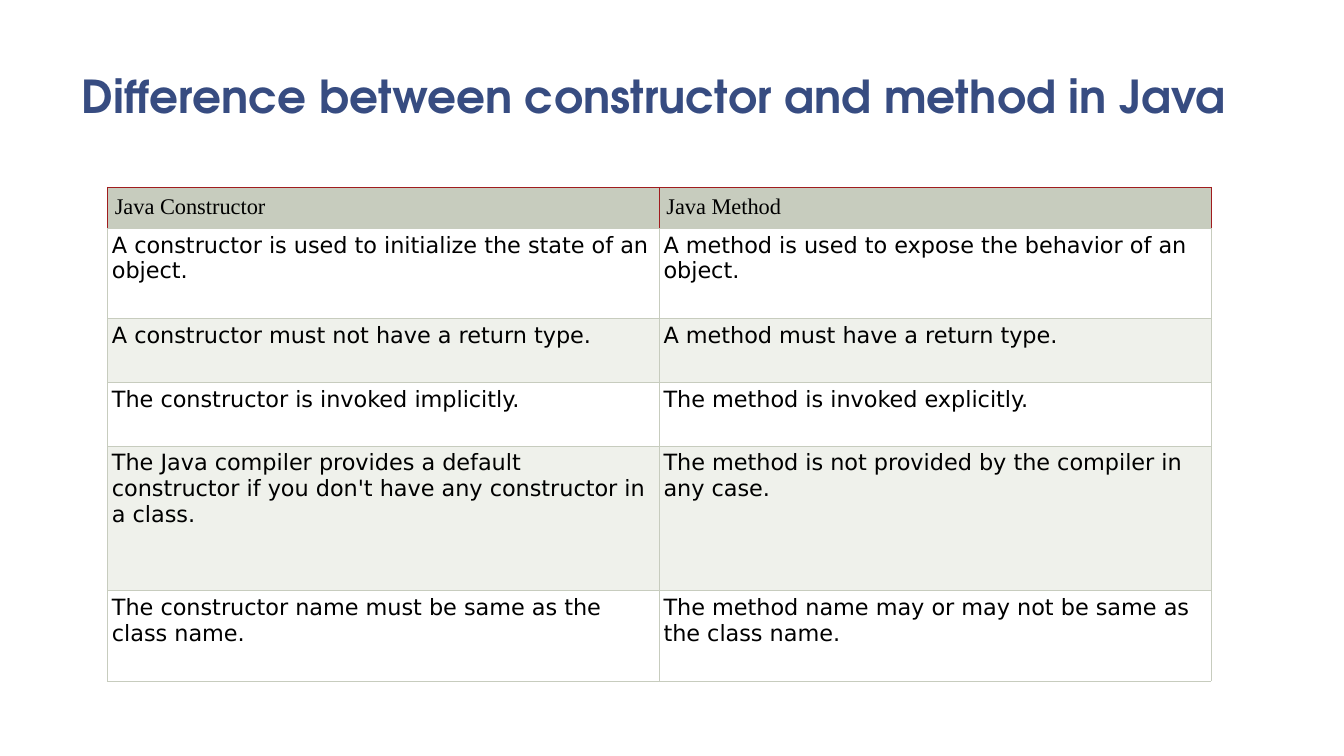
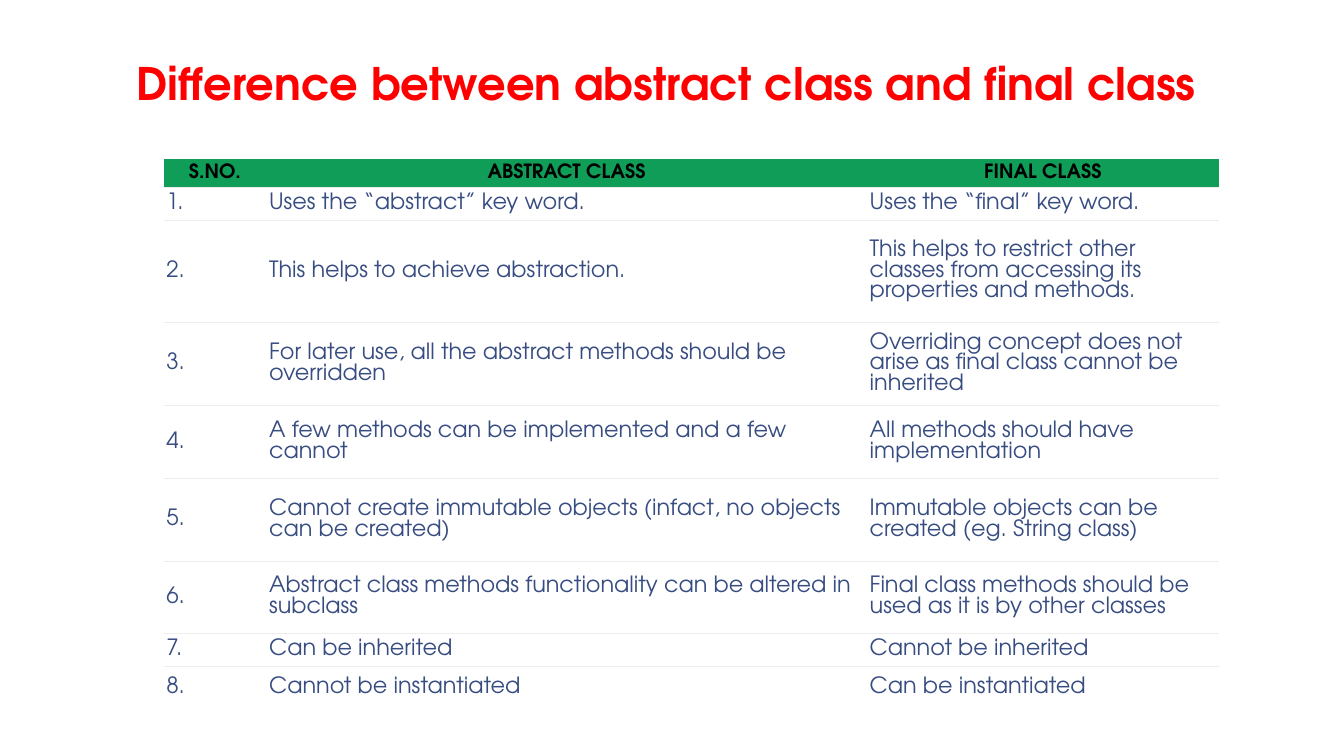
import pptx
import pptx.dml.color
import pptx.enum.text
import pptx.oxml.ns
import pptx.util
from dataclasses import dataclass
from lxml import etree

Pt = pptx.util.Pt
ALIGN = pptx.enum.text.PP_ALIGN
ANCHOR = pptx.enum.text.MSO_ANCHOR


@dataclass(frozen=True)
class Theme:
    navy: str = "374C81"
    red: str = "FF0000"
    black: str = "000000"
    white: str = "FFFFFF"
    sage: str = "C7CCBE"
    pale_sage: str = "EFF1EB"
    maroon: str = "A01C1E"
    green: str = "0F9D58"
    rule: str = "EDEDED"
    display: str = "TeX Gyre Adventor"
    sans: str = "DejaVu Sans"
    serif: str = "Times New Roman"
    body_size: float = 16
    heading_size: float = 14
    rule_width: float = 0.6


THEME = Theme()

# Content: the first row of each comparison is its heading
CONSTRUCTOR_VS_METHOD = [
    ("Java Constructor", "Java Method"),
    ("A constructor is used to initialize the state of an object.",
     "A method is used to expose the behavior of an object."),
    ("A constructor must not have a return type.", "A method must have a return type."),
    ("The constructor is invoked implicitly.", "The method is invoked explicitly."),
    ("The Java compiler provides a default constructor if you don't have any constructor in a class.",
     "The method is not provided by the compiler in any case."),
    ("The constructor name must be same as the class name.",
     "The method name may or may not be same as the class name."),
]

ABSTRACT_VS_FINAL = [
    ("Uses the “abstract” key word.", "Uses the “final” key word."),
    ("This helps to achieve abstraction.",
     "This helps to restrict other classes from accessing its properties and methods."),
    ("For later use, all the abstract methods should be overridden",
     "Overriding concept does not arise as final class cannot be inherited"),
    ("A few methods can be implemented and a few cannot",
     "All methods should have implementation"),
    ("Cannot create immutable objects (infact, no objects can be created)",
     "Immutable objects can be created (eg. String class)"),
    ("Abstract class methods functionality can be altered in subclass",
     "Final class methods should be used as it is by other classes"),
    ("Can be inherited", "Cannot be inherited"),
    ("Cannot be instantiated", "Can be instantiated"),
]
NUMBERED_DIFFERENCES = [("S.NO.", "ABSTRACT CLASS", "FINAL CLASS")] + [
    (f"{number}.", *pair) for number, pair in enumerate(ABSTRACT_VS_FINAL, 1)]


# Row looks: borders are given by side, a missing side has no line
@dataclass(frozen=True)
class RowLook:
    font: str
    size: float
    color: str
    fills: tuple
    borders: dict
    margins: tuple
    bold: bool = False
    align: ALIGN = ALIGN.LEFT
    anchor: ANCHOR = ANCHOR.TOP


SAGE_HEADING = RowLook(
    THEME.serif, THEME.body_size, THEME.black, (THEME.sage,),
    dict(L=THEME.maroon, R=THEME.maroon, T=THEME.maroon, B=THEME.sage), (5, 5))
SAGE_BODY = RowLook(
    THEME.sans, THEME.body_size, THEME.black, (THEME.white, THEME.pale_sage),
    dict.fromkeys("LRTB", THEME.sage), (3, 3))
GREEN_HEADING = RowLook(
    THEME.display, THEME.heading_size, THEME.black, (THEME.green,),
    dict(B=THEME.rule), (1.5, 1.5), True, ALIGN.CENTER, ANCHOR.MIDDLE)
RULED_BODY = RowLook(
    THEME.display, THEME.body_size, THEME.navy, (THEME.white,),
    dict.fromkeys("TB", THEME.rule), (2, 1), anchor=ANCHOR.MIDDLE)
RULED_LAST = RowLook(
    THEME.display, THEME.body_size, THEME.navy, (THEME.white,),
    dict(T=THEME.rule), (2, 1), anchor=ANCHOR.MIDDLE)

SLIDES = [
    dict(title="Difference between constructor and method in Java",
         title_box=(49, 6, 839, 122), title_size=32.4, title_color=THEME.navy,
         title_bottom=52.5,
         rows=CONSTRUCTOR_VS_METHOD, corner=(77, 133.8), widths=(394, 394),
         heights=(29, 64.5, 45.5, 45.5, 103.5, 64.5),
         looks=(SAGE_HEADING, SAGE_BODY, SAGE_BODY)),
    dict(title="Difference between abstract class and final class",
         title_box=(88, 6, 800, 77), title_size=32, title_color=THEME.red,
         title_bottom=5,
         rows=NUMBERED_DIFFERENCES, corner=(116.8, 113.8), widths=(73.5, 429, 251.5),
         heights=(16.5, 23.5, 73, 59, 52, 59, 52, 23, 30.5),
         looks=(GREEN_HEADING, RULED_BODY, RULED_LAST)),
]


def set_font(paragraph, name, size, color, bold):
    font = paragraph.font
    font.name, font.size, font.bold = name, Pt(size), bold
    font.color.rgb = pptx.dml.color.RGBColor.from_string(color)


def add_title(slide, page):
    frame = slide.shapes.add_textbox(*map(Pt, page["title_box"])).text_frame
    frame.word_wrap = True
    frame.vertical_anchor = ANCHOR.BOTTOM
    frame.margin_left = frame.margin_right = Pt(9.5)
    frame.margin_top, frame.margin_bottom = Pt(5), Pt(page["title_bottom"])
    heading = frame.paragraphs[0]
    heading.text = page["title"]
    heading.line_spacing = 0.85
    set_font(heading, THEME.display, page["title_size"], page["title_color"], True)


def draw_borders(cell, borders):
    qn = pptx.oxml.ns.qn
    properties = cell._tc.get_or_add_tcPr()
    for side in "LRTB":
        line = etree.SubElement(properties, qn(f"a:ln{side}"), w=str(Pt(THEME.rule_width)))
        if side in borders:
            paint = etree.SubElement(line, qn("a:solidFill"))
            etree.SubElement(paint, qn("a:srgbClr"), val=borders[side])
        else:
            etree.SubElement(line, qn("a:noFill"))


def fill_cell(cell, text, look, fill):
    draw_borders(cell, look.borders)
    cell.fill.solid()
    cell.fill.fore_color.rgb = pptx.dml.color.RGBColor.from_string(fill)
    across, down = map(Pt, look.margins)
    cell.margin_left = cell.margin_right = across
    cell.margin_top = cell.margin_bottom = down
    cell.vertical_anchor = look.anchor
    paragraph = cell.text_frame.paragraphs[0]
    paragraph.text = text
    paragraph.alignment = look.align
    set_font(paragraph, look.font, look.size, look.color, look.bold)


def add_comparison(slide, page):
    rows, widths, heights = page["rows"], page["widths"], page["heights"]
    heading, body, last = page["looks"]
    comparison = slide.shapes.add_table(
        len(rows), len(widths), *map(Pt, page["corner"]),
        Pt(sum(widths)), Pt(sum(heights))).table
    comparison.horz_banding = False
    for column, width in zip(comparison.columns, widths):
        column.width = Pt(width)
    looks = [heading] + [body] * (len(rows) - 2) + [last]
    for index, (texts, height, look) in enumerate(zip(rows, heights, looks)):
        comparison.rows[index].height = Pt(height)
        fill = look.fills[(index - 1) % len(look.fills)]
        for column, text in enumerate(texts):
            fill_cell(comparison.cell(index, column), text, look, fill)


def main():
    deck = pptx.Presentation()
    deck.slide_width, deck.slide_height = Pt(960), Pt(540)
    for page in SLIDES:
        slide = deck.slides.add_slide(deck.slide_layouts[6])
        add_title(slide, page)
        add_comparison(slide, page)
    deck.save("out.pptx")


if __name__ == "__main__":
    main()
